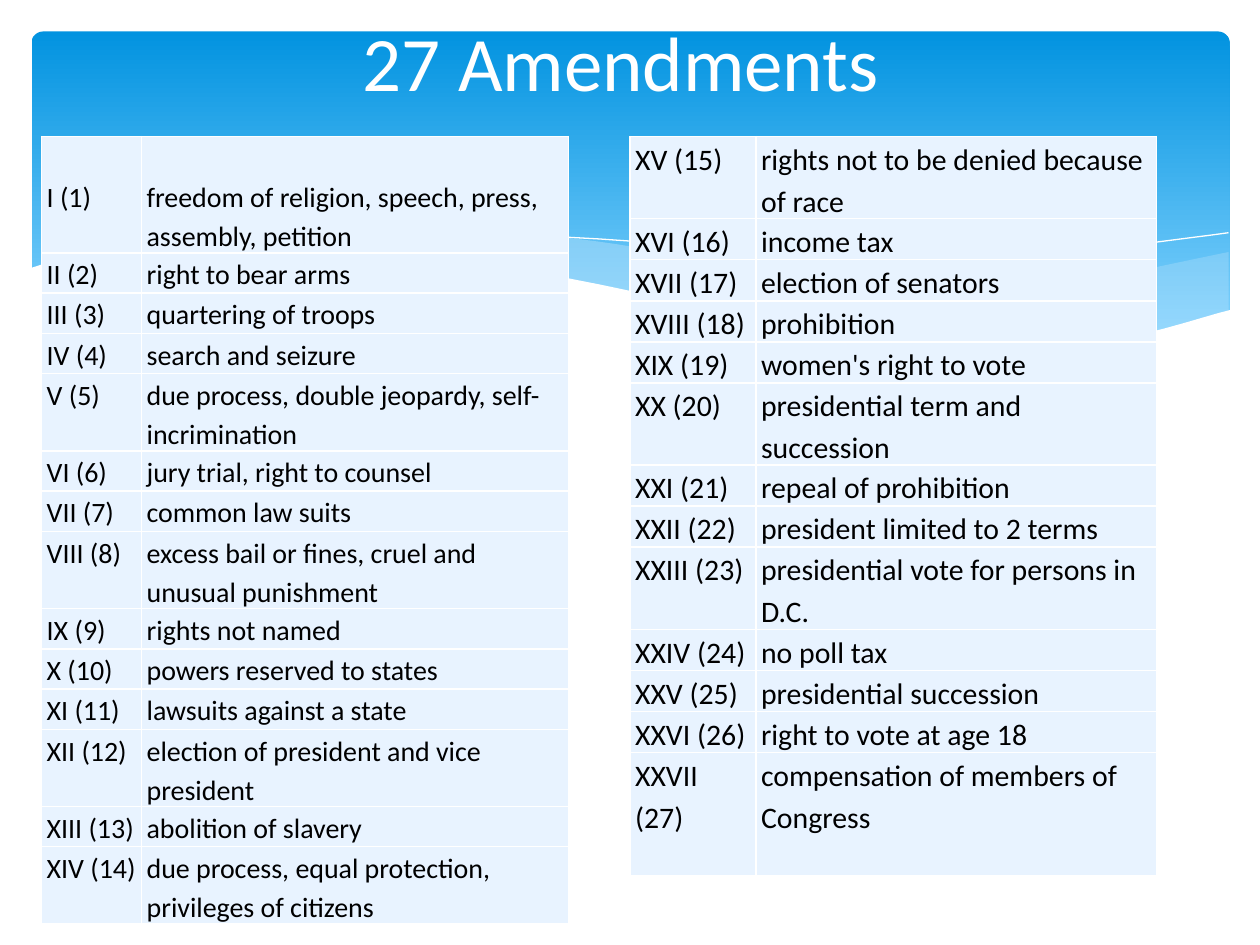
from dataclasses import dataclass

from lxml import etree
from pptx import Presentation
from pptx import util as u
from pptx.dml.color import RGBColor
from pptx.enum import shapes, text
from pptx.oxml.ns import qn

Pt = u.Pt
Point = tuple[float, float]
WHITE = RGBColor(0xFF, 0xFF, 0xFF)
BLACK = RGBColor(0x00, 0x00, 0x00)
BAND_TOP = RGBColor(0x02, 0x93, 0xE0)
BAND_BOTTOM = RGBColor(0x83, 0xD3, 0xFE)
WAVE_BLUE = RGBColor(0xC6, 0xE7, 0xFC)
CELL_BLUE = RGBColor(0xE8, 0xF3, 0xFF)
FONT = "Calibri"
ROW_HEIGHT = 23
SIDE_INSET = 2.9
CURVE_STEPS = 8


@dataclass
class Wave:
    """Smooth edges through knots; without a fill it is a white hairline."""
    edges: list[list[Point]]
    fill: RGBColor | None = None
    opacity: int = 100


@dataclass
class AmendmentTable:
    left: float
    columns: tuple[float, float]
    size: int
    first_number: int
    rows: list[tuple[str, str]]
    first_inset: float = 0  # space above the first row's text
    last_inset: float = 0  # space below the last row's text


WAVES = [
    # Pale crest at the right
    Wave([[(702, 144), (599, 165.5), (476, 191)],
          [(476, 191), (570, 199.5), (640, 196), (702, 178)]], WAVE_BLUE, 29),
    # Long pale wave
    Wave([[(643, 196.5), (558, 183), (453, 160), (352, 139.5), (273, 133),
           (206, 137.5)],
          [(206, 137.5), (323, 160), (456, 188), (556, 199.5), (643, 196.5)]],
         WAVE_BLUE, 40),
    # Falling and rising hairlines
    Wave([[(222, 140.5), (311, 135), (458, 150), (653, 196)]]),
    Wave([[(441, 185), (580, 151), (702, 133)]]),
    # White lower edge of the band
    Wave([[(703.5, 177), (612, 198), (495, 193), (322, 158.5), (180, 134),
           (85, 134.5), (16.5, 153.5)],
          [(16.5, 237), (703.5, 237)]], WHITE),
]

TABLES = [
    AmendmentTable(23.8, (57.1, 244), 16, 1, [
        ("I", "freedom of religion, speech, press, assembly, petition"),
        ("II", "right to bear arms"),
        ("III", "quartering of troops"),
        ("IV", "search and seizure"),
        ("V", "due process, double jeopardy, self-incrimination"),
        ("VI", "jury trial, right to counsel"),
        ("VII", "common law suits"),
        ("VIII", "excess bail or fines, cruel and unusual punishment"),
        ("IX", "rights not named"),
        ("X", "powers reserved to states"),
        ("XI", "lawsuits against a state"),
        ("XII", "election of president and vice president"),
        ("XIII", "abolition of slavery"),
        ("XIV", "due process, equal protection, privileges of citizens"),
    ], first_inset=22.4),
    AmendmentTable(360, (72, 229), 17, 15, [
        ("XV", "rights not to be denied because of race"),
        ("XVI", "income tax"),
        ("XVII", "election of senators"),
        ("XVIII", "prohibition"),
        ("XIX", "women's right to vote"),
        ("XX", "presidential term and succession"),
        ("XXI", "repeal of prohibition"),
        ("XXII", "president limited to 2 terms"),
        ("XXIII", "presidential vote for persons in D.C."),
        ("XXIV", "no poll tax"),
        ("XXV", "presidential succession"),
        ("XXVI", "right to vote at age 18"),
        ("XXVII", "compensation of members of Congress"),
    ], last_inset=23.4),
]


def apply(target, values: dict) -> None:
    for key, value in values.items():
        setattr(target, key, value)


def write(paragraph, wording: str, size: float, color: RGBColor) -> None:
    run = paragraph.add_run()
    run.text = wording
    apply(run.font, {"name": FONT, "size": Pt(size)})
    run.font.color.rgb = color


def smooth(knots: list[Point]) -> list[Point]:
    """Catmull-Rom curve through the knots."""
    padded = [knots[0], *knots, knots[-1]]
    curve = [knots[0]]
    for a, b, c, d in zip(padded, padded[1:], padded[2:], padded[3:]):
        for step in range(1, CURVE_STEPS + 1):
            t = step / CURVE_STEPS
            curve.append(tuple(
                q + t * (r - p) / 2 + t**2 * (2 * p - 5 * q + 4 * r - s) / 2
                + t**3 * (3 * q - p - 3 * r + s) / 2
                for p, q, r, s in zip(a, b, c, d)))
    return curve


def draw_band(slide) -> None:
    band = slide.shapes.add_shape(shapes.MSO_SHAPE.ROUNDED_RECTANGLE,
                                  Pt(18), Pt(18), Pt(684.7), Pt(194.4))
    band.adjustments[0] = 0.034
    band.shadow.inherit = False
    band.line.fill.background()
    band.fill.gradient()
    band.fill.gradient_angle = 270
    stops = zip(band.fill.gradient_stops, (0, 0.9), (BAND_TOP, BAND_BOTTOM))
    for stop, position, color in stops:
        stop.position = position
        stop.color.rgb = color


def draw_wave(slide, wave: Wave) -> None:
    first, *others = [(Pt(x), Pt(y))
                      for edge in wave.edges for x, y in smooth(edge)]
    builder = slide.shapes.build_freeform(*first)
    builder.add_line_segments(others, close=wave.fill is not None)
    outline = builder.convert_to_shape()
    outline.shadow.inherit = False
    if wave.fill is None:
        outline.fill.background()
        outline.line.color.rgb = WHITE
        outline.line.width = Pt(0)
        return
    outline.line.fill.background()
    outline.fill.solid()
    outline.fill.fore_color.rgb = wave.fill
    if wave.opacity < 100:
        color = outline._element.spPr.find(qn("a:solidFill"))[0]
        etree.SubElement(color, qn("a:alpha"), val=str(wave.opacity * 1000))


def add_borders(cell) -> None:
    properties = cell._tc.get_or_add_tcPr()
    for index, side in enumerate(("lnL", "lnR", "lnT", "lnB")):
        border = etree.Element(qn(f"a:{side}"), w=str(int(Pt(1))))
        solid = etree.SubElement(border, qn("a:solidFill"))
        etree.SubElement(solid, qn("a:srgbClr"), val=str(WHITE))
        properties.insert(index, border)


def draw_table(slide, content: AmendmentTable) -> None:
    count = len(content.rows)
    table = slide.shapes.add_table(
        count, 2, Pt(content.left), Pt(78), Pt(sum(content.columns)),
        Pt(ROW_HEIGHT * count)).table
    apply(table, {"first_row": False, "horz_banding": False})
    for column, width in zip(table.columns, content.columns):
        column.width = Pt(width)
    for index, (numeral, subject) in enumerate(content.rows):
        above = content.first_inset if index == 0 else 0
        below = content.last_inset if index == count - 1 else 0
        label = f"{numeral} ({content.first_number + index})"
        table.rows[index].height = Pt(ROW_HEIGHT)
        for cell, wording in zip(table.rows[index].cells, (label, subject)):
            apply(cell, {"margin_left": Pt(SIDE_INSET),
                         "margin_right": Pt(SIDE_INSET),
                         "margin_top": Pt(above), "margin_bottom": Pt(below)})
            cell.fill.solid()
            cell.fill.fore_color.rgb = CELL_BLUE
            add_borders(cell)
            paragraph = cell.text_frame.paragraphs[0]
            paragraph.line_spacing = 1.15
            write(paragraph, wording, content.size, BLACK)


def draw_title(slide) -> None:
    frame = slide.shapes.add_textbox(Pt(36), Pt(-14.4), Pt(648),
                                     Pt(98.6)).text_frame
    apply(frame, {"word_wrap": True,
                  "vertical_anchor": text.MSO_ANCHOR.MIDDLE})
    frame.paragraphs[0].alignment = text.PP_ALIGN.CENTER
    write(frame.paragraphs[0], "27 Amendments ", 44, WHITE)


def main() -> None:
    deck = Presentation()
    apply(deck, {"slide_width": Pt(720), "slide_height": Pt(540)})
    slide = deck.slides.add_slide(deck.slide_layouts[6])
    draw_band(slide)
    for wave in WAVES:
        draw_wave(slide, wave)
    draw_title(slide)
    for content in TABLES:
        draw_table(slide, content)
    deck.save("out.pptx")


if __name__ == "__main__":
    main()
